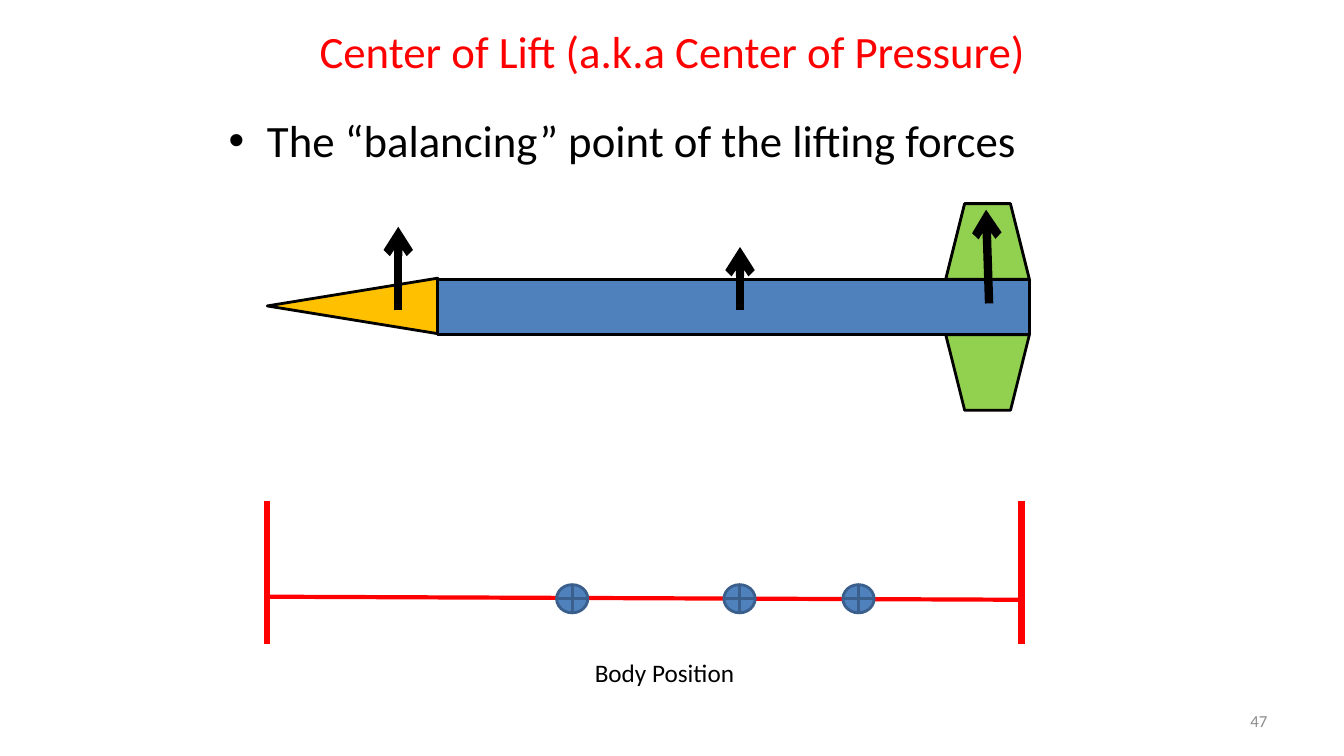
from lxml.etree import SubElement
from pptx import Presentation
from pptx.dml.color import RGBColor
from pptx.enum.shapes import MSO_CONNECTOR, MSO_SHAPE
from pptx.enum.text import MSO_ANCHOR, MSO_AUTO_SIZE, PP_ALIGN
from pptx.oxml.ns import qn
from pptx.util import Inches, Pt

RED, BLACK, BLUE = "FF0000", "000000", "4F81BD"


def color(hex_string):
    return RGBColor.from_string(hex_string)


def write(frame, text, size=18, fill=BLACK, font="Calibri", align=PP_ALIGN.CENTER,
          anchor=MSO_ANCHOR.TOP, bullet=None, indent=0.38, before=0):
    frame.word_wrap = True
    frame.auto_size = MSO_AUTO_SIZE.NONE
    frame.vertical_anchor = anchor
    paragraph = frame.paragraphs[0]
    paragraph.alignment = align
    paragraph.space_before = Pt(before)
    run = paragraph.add_run()
    run.text = text
    run.font.name = font
    run.font.size = Pt(size)
    run.font.color.rgb = color(fill)
    if bullet:
        properties = paragraph._p.get_or_add_pPr()
        properties.set("marL", str(Inches(indent)))
        properties.set("indent", str(-Inches(indent)))
        SubElement(properties, qn("a:buFont"), typeface="Arial")
        SubElement(properties, qn("a:buChar"), char=bullet)


class RocketSlide:
    def __init__(self, presentation):
        self.slide = presentation.slides.add_slide(presentation.slide_layouts[5])
        self.shapes = self.slide.shapes
        self.outline_width = 2

    def title(self, text, left, top, width, height, **style):
        heading = self.shapes.title
        heading.left, heading.top = Inches(left), Inches(top)
        heading.width, heading.height = Inches(width), Inches(height)
        write(heading.text_frame, text, **style)

    def label(self, text, left, top, width, height, **style):
        box = self.shapes.add_textbox(
            Inches(left), Inches(top), Inches(width), Inches(height))
        write(box.text_frame, text, **style)

    def piece(self, preset, left, top, width, height, fill, outline=BLACK, rotation=0):
        piece = self.shapes.add_shape(
            preset, Inches(left), Inches(top), Inches(width), Inches(height))
        piece.rotation = rotation
        piece.shadow.inherit = False
        piece.fill.solid()
        piece.fill.fore_color.rgb = color(fill)
        piece.line.color.rgb = color(outline)
        piece.line.width = Pt(self.outline_width)

    def line(self, start, end, width, stroke=RED, arrow=False):
        line = self.shapes.add_connector(
            MSO_CONNECTOR.STRAIGHT, *(Inches(value) for value in (*start, *end)))
        line.line.color.rgb = color(stroke)
        line.line.width = Pt(width)
        properties = line._element.spPr
        if arrow:
            SubElement(properties.find(qn("a:ln")), qn("a:tailEnd"), type="arrow")
        SubElement(properties, qn("a:effectLst"))

    def lift(self, start, end):
        self.line(start, end, 6, stroke=BLACK, arrow=True)


def main():
    presentation = Presentation()
    presentation.slide_width = Inches(13.33)
    presentation.slide_height = Inches(7.5)
    rocket = RocketSlide(presentation)

    rocket.title("Center of Lift (a.k.a Center of Pressure)", 2.17, 0.17, 9, 0.67,
                 size=32, fill=RED, anchor=MSO_ANCHOR.MIDDLE)
    rocket.label("The “balancing” point of the lifting forces", 2.17, 1.07, 9, 0.73,
                 size=32, align=PP_ALIGN.LEFT, bullet="•", before=6.4)

    rocket.piece(MSO_SHAPE.ISOSCELES_TRIANGLE, 3.22, 2.19, 0.55, 1.69, "FFC000",
                 rotation=270)
    rocket.lift((3.95, 3.08), (3.95, 2.25))
    rocket.piece(MSO_SHAPE.RECTANGLE, 4.34, 2.77, 5.87, 0.55, BLUE)
    rocket.lift((7.34, 3.08), (7.34, 2.45))
    for fin_top, rotation in ((2.02, 0), (3.32, 180)):
        rocket.piece(MSO_SHAPE.TRAPEZOID, 9.38, fin_top, 0.83, 0.75, "92D050",
                     rotation=rotation)
    rocket.lift((9.81, 3.01), (9.78, 2.08))

    nose, tail = 2.65, 10.13
    rocket.line((nose, 5.92), (tail, 5.95), 3)
    for marker_left in (7.18, 5.52, 8.36):
        rocket.piece(MSO_SHAPE.FLOWCHART_OR, marker_left, 5.8, 0.31, 0.28, BLUE,
                     outline="3A5F8C")
    for body_end in (nose, tail):
        rocket.line((body_end, 4.97), (body_end, 6.39), 4.5)
    rocket.label("Body Position", 4.82, 6.47, 3.54, 0.4)
    rocket.label("47", 9.56, 6.95, 3.11, 0.4, size=12, fill="8C8C8C",
                 align=PP_ALIGN.RIGHT, anchor=MSO_ANCHOR.MIDDLE)

    presentation.save("out.pptx")


if __name__ == "__main__":
    main()
